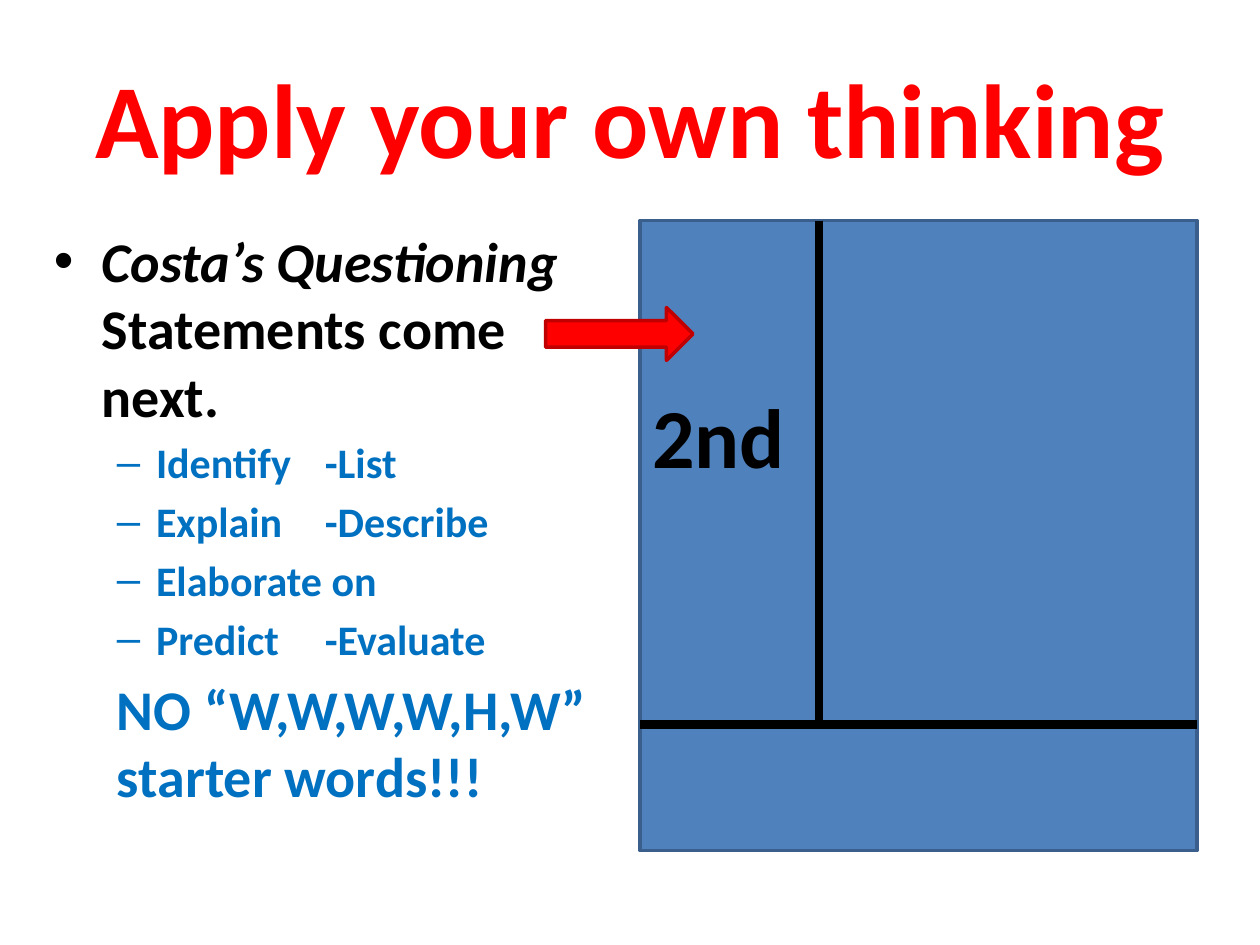
from lxml.etree import SubElement
from pptx import Presentation
from pptx.dml.color import RGBColor
from pptx.enum.shapes import MSO_CONNECTOR, MSO_SHAPE
from pptx.enum.text import MSO_ANCHOR, MSO_AUTO_SIZE, PP_ALIGN
from pptx.oxml.ns import qn
from pptx.util import Inches, Pt

RED = RGBColor(0xFF, 0x00, 0x00)
DARK_RED = RGBColor(0xC0, 0x00, 0x00)
BLACK = RGBColor(0x00, 0x00, 0x00)
TEXT_BLUE = RGBColor(0x00, 0x70, 0xC0)
PAGE_BLUE = RGBColor(0x4F, 0x81, 0xBD)
EDGE_BLUE = RGBColor(0x3A, 0x5F, 0x8C)

PAGE_LEFT, PAGE_TOP, PAGE_WIDTH, PAGE_HEIGHT = 5.08, 1.75, 4.42, 5
MARGIN_X, SUMMARY_Y = 6.5, 5.75


def write(paragraph, text, size=32, color=BLACK, italic=False):
    run = paragraph.add_run()
    run.text = text
    run.font.name = "Calibri"
    run.font.size = Pt(size)
    run.font.bold = True
    run.font.italic = italic
    run.font.color.rgb = color


def indent(paragraph, left, hanging=0, bullet=None, tab=None):
    """Set the paragraph's indents, bullet and tab stop, in inches."""
    properties = paragraph._p.get_or_add_pPr()
    properties.set("marL", str(Inches(left)))
    properties.set("indent", str(Inches(-hanging)))
    if bullet:
        SubElement(properties, qn("a:buFont"), typeface="Arial")
        SubElement(properties, qn("a:buChar"), char=bullet)
    else:
        SubElement(properties, qn("a:buNone"))
    if tab:
        stops = SubElement(properties, qn("a:tabLst"))
        SubElement(stops, qn("a:tab"), pos=str(Inches(tab)), algn="l")


prs = Presentation()
prs.slide_width, prs.slide_height = Inches(10), Inches(7.5)
slide = prs.slides.add_slide(prs.slide_layouts[5])
shapes = slide.shapes

title = shapes.title
title.left, title.top = Inches(0.5), Inches(0.3)
title.width, title.height = Inches(9), Inches(1.25)
title.text_frame.vertical_anchor = MSO_ANCHOR.MIDDLE
heading = title.text_frame.paragraphs[0]
heading.alignment = PP_ALIGN.CENTER
write(heading, "Apply your own thinking", size=60, color=RED)

# Instructions
instructions = shapes.add_textbox(Inches(0.33), Inches(1.75), Inches(4.75), Inches(4.95)).text_frame
instructions.word_wrap = True
intro = instructions.paragraphs[0]
intro.space_before = Pt(6.4)
indent(intro, 0.38, 0.38, "•")
write(intro, "Costa’s Questioning ", italic=True)
write(intro, "Statements come next.")

for starters in ("Identify\t-List", "Explain\t-Describe", "Elaborate on", "Predict\t-Evaluate"):
    item = instructions.add_paragraph()
    item.level = 1
    item.space_before = Pt(4.8)
    indent(item, 0.81, 0.31, "–", tab=2.15)
    write(item, starters, size=24, color=TEXT_BLUE)

warning = instructions.add_paragraph()
warning.level = 1
warning.space_before = Pt(6.4)
indent(warning, 0.5)
write(warning, "NO “W,W,W,W,H,W” starter words!!!", color=TEXT_BLUE)

# Note page, divided into a margin, a notes area and a summary
page = shapes.add_shape(MSO_SHAPE.RECTANGLE, Inches(PAGE_LEFT), Inches(PAGE_TOP),
                        Inches(PAGE_WIDTH), Inches(PAGE_HEIGHT))
page.shadow.inherit = False
page.fill.solid()
page.fill.fore_color.rgb = PAGE_BLUE
page.line.color.rgb = EDGE_BLUE
page.line.width = Pt(2)

for x1, y1, x2, y2 in ((MARGIN_X, PAGE_TOP, MARGIN_X, SUMMARY_Y),
                       (PAGE_LEFT, SUMMARY_Y, PAGE_LEFT + PAGE_WIDTH, SUMMARY_Y)):
    divider = shapes.add_connector(MSO_CONNECTOR.STRAIGHT, Inches(x1), Inches(y1),
                                   Inches(x2), Inches(y2))
    divider.line.color.rgb = BLACK
    divider.line.width = Pt(5)
    SubElement(divider._element.spPr, qn("a:effectLst"))

step = shapes.add_textbox(Inches(PAGE_LEFT), Inches(3), Inches(1.33), Inches(0.91)).text_frame
step.word_wrap = True
step.auto_size = MSO_AUTO_SIZE.SHAPE_TO_FIT_TEXT
write(step.paragraphs[0], "2nd", size=48)

pointer = shapes.add_shape(MSO_SHAPE.RIGHT_ARROW, Inches(4.33), Inches(2.44),
                           Inches(1.17), Inches(0.42))
pointer.shadow.inherit = False
pointer.fill.solid()
pointer.fill.fore_color.rgb = RED
pointer.line.color.rgb = DARK_RED
pointer.line.width = Pt(2)

prs.save("out.pptx")
